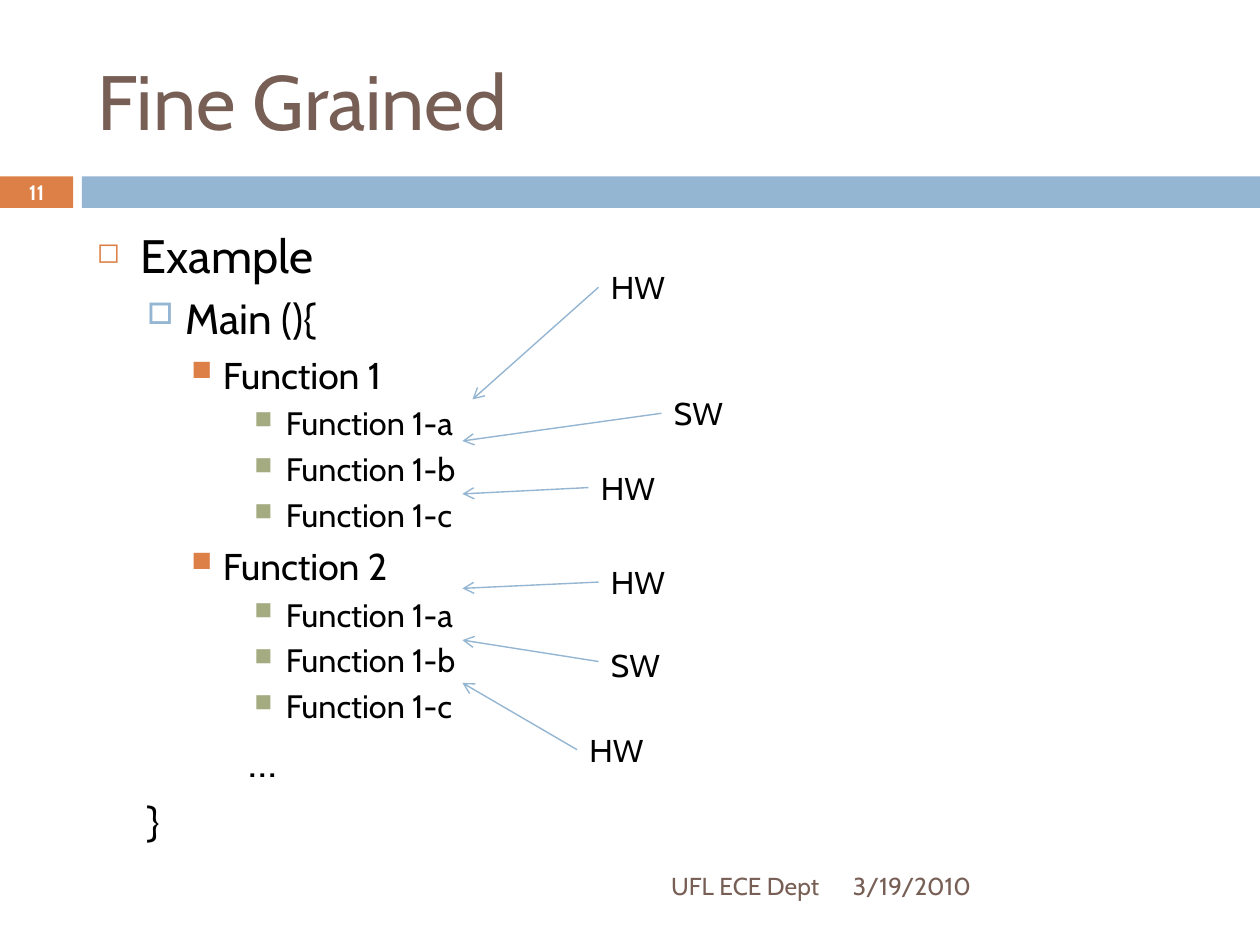
from dataclasses import dataclass

from lxml import etree
from pptx import Presentation
from pptx import util as u
from pptx.dml.color import RGBColor
from pptx.enum import shapes, text
from pptx.oxml.ns import qn


@dataclass(frozen=True)
class Theme:
    font: str = "Cabin"
    brown: str = "775F55"
    orange: str = "DD8047"
    blue: str = "94B6D2"
    green: str = "A5AB81"
    black: str = "000000"
    white: str = "FFFFFF"
    title: float = 44
    label: float = 18
    footer: float = 14
    number: float = 11.9
    line: float = 0.79


T = Theme()

# Outline levels: margin, hanging indent, space before, size, bullet, colour, bullet %
LEVELS = [
    (0.35, 0.35, 7, 26.8, "◻", T.orange, 60),
    (0.7, 0.3, 5.5, 24.1, "□", T.blue, 70),
    (1, 0.25, 5, 21.3, "■", T.orange, 75),
    (1.5, 0.25, 4, 18.5, "■", T.green, 75),
]
STEPS = [(3, f"Function 1-{letter}", True) for letter in "abc"]
OUTLINE = [
    (0, "Example", True),
    (1, "Main (){", True),
    (2, "Function 1", True),
    *STEPS,
    (2, "Function 2", True),
    *STEPS,
    (1, "\t\t…", False),
    (1, "}", False),
]

# Label, left, top, arrow tip; a start height where the arrow leaves off-centre
CALLOUTS = [
    ("HW", 4.75, 2.08, (3.75, 3.17), None),
    ("SW", 5.25, 3.08, (3.67, 3.5), None),
    ("HW", 4.67, 3.67, (3.67, 3.92), None),
    ("HW", 4.75, 4.42, (3.67, 4.67), None),
    ("SW", 4.75, 5.08, (3.67, 5.08), 5.25),
    ("HW", 4.58, 5.75, (3.67, 5.42), None),
]


def rgb(color):
    return RGBColor.from_string(color)


class Deck:
    def __init__(self, theme):
        self.t = theme
        self.prs = Presentation()
        self.prs.slide_width, self.prs.slide_height = u.Inches(10), u.Inches(7.5)
        self.s = self.prs.slides.add_slide(self.prs.slide_layouts[5])

    def style(self, p, size, color, align=text.PP_ALIGN.LEFT, bold=False):
        p.alignment = align
        f = p.font
        f.name, f.size, f.bold = self.t.font, u.Pt(size), bold
        f.color.rgb = rgb(color)

    def title(self, words, x, y, w, h):
        sp = self.s.shapes.title
        sp.left, sp.top, sp.width, sp.height = map(u.Inches, (x, y, w, h))
        tf = sp.text_frame
        tf.text = words
        tf.vertical_anchor = text.MSO_ANCHOR.MIDDLE
        self.style(tf.paragraphs[0], self.t.title, self.t.brown)

    def bar(self, x, y, w, h, color):
        sp = self.s.shapes.add_shape(
            shapes.MSO_SHAPE.RECTANGLE, *map(u.Inches, (x, y, w, h)))
        sp.shadow.inherit = False
        sp.fill.solid()
        sp.fill.fore_color.rgb = rgb(color)
        sp.line.fill.background()
        return sp

    def number(self, sp, words):
        tf = sp.text_frame
        tf.margin_top = tf.margin_bottom = 0
        tf.text = words
        self.style(tf.paragraphs[0], self.t.number, self.t.white,
                   text.PP_ALIGN.CENTER, True)

    def box(self, words, x, y, w, h, size, color,
            align=text.PP_ALIGN.LEFT, anchor=text.MSO_ANCHOR.TOP):
        sp = self.s.shapes.add_textbox(*map(u.Inches, (x, y, w, h)))
        tf = sp.text_frame
        tf.word_wrap = True
        tf.vertical_anchor = anchor
        tf.text = words
        for p in tf.paragraphs:
            self.style(p, size, color, align)
        return sp

    def outline(self, items, x, y, w, h):
        words = "\n".join(item[1] for item in items)
        sp = self.box(words, x, y, w, h, LEVELS[0][3], self.t.black)
        for p, (level, _, bulleted) in zip(sp.text_frame.paragraphs, items):
            margin, hang, before, size, char, color, percent = LEVELS[level]
            p.level = level
            p.font.size, p.space_before = u.Pt(size), u.Pt(before)
            pPr = p._p.get_or_add_pPr()
            pPr.set("marL", str(u.Inches(margin)))
            pPr.set("indent", str(-u.Inches(hang)))
            if bulleted:
                self.bullet(pPr, char, color, percent)

    def bullet(self, pPr, char, color, percent):
        # Bullet elements go before the default run properties
        clr = etree.Element(qn("a:buClr"))
        etree.SubElement(clr, qn("a:srgbClr"), val=color)
        size = etree.Element(qn("a:buSzPct"), val=str(percent * 1000))
        mark = etree.Element(qn("a:buChar"), char=char)
        for el in (clr, size, mark):
            pPr.find(qn("a:defRPr")).addprevious(el)

    def callout(self, words, x, y, tip, start):
        sp = self.box(words, x, y, 1.75, 0.4, self.t.label, self.t.black)
        c = self.s.shapes.add_connector(
            shapes.MSO_CONNECTOR.STRAIGHT,
            *map(u.Inches, (x, start or y + 0.2, *tip)))
        if start is None:
            c.begin_connect(sp, 1)
        c.line.color.rgb = rgb(self.t.blue)
        c.line.width = u.Pt(self.t.line)
        etree.SubElement(c.line._get_or_add_ln(), qn("a:tailEnd"), type="arrow")
        etree.SubElement(c._element.spPr, qn("a:effectLst"))


def main():
    d = Deck(T)

    # Header
    d.title("Fine Grained", 0.67, 0.25, 8.92, 1.08)
    d.number(d.bar(0, 1.4, 0.58, 0.25, T.orange), "11")
    d.bar(0.65, 1.4, 9.35, 0.25, T.blue)

    # Footer
    middle = text.MSO_ANCHOR.MIDDLE
    d.box("UFL ECE Dept", 0.67, 6.83, 5.93, 0.4, T.footer, T.brown,
          text.PP_ALIGN.RIGHT, middle)
    d.box("3/19/2010", 6.67, 6.83, 2.92, 0.4, T.footer, T.brown, anchor=middle)

    # Program outline and its hardware/software callouts
    d.outline(OUTLINE, 0.67, 1.75, 8.92, 4.92)
    for item in CALLOUTS:
        d.callout(*item)

    d.prs.save("out.pptx")


if __name__ == "__main__":
    main()
